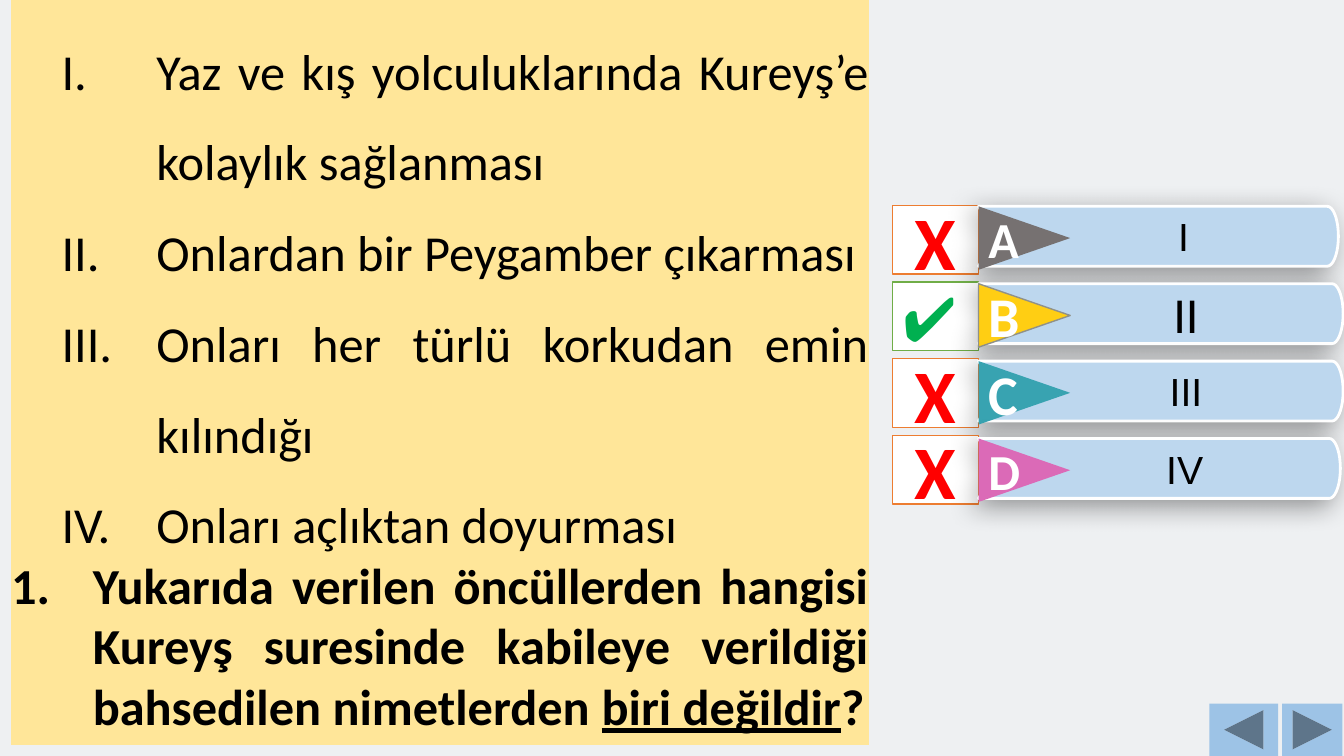
import math
from pptx import Presentation
from pptx import util as u
from pptx.dml.color import RGBColor
from pptx.enum import shapes, text
from pptx.oxml.ns import qn
from lxml import etree

PREMISES = [
    "Yaz ve kış yolculuklarında Kureyş’e kolaylık sağlanması",
    "Onlardan bir Peygamber çıkarması",
    "Onları her türlü korkudan emin kılındığı",
    "Onları açlıktan doyurması",
]
QUESTION = [
    "Yukarıda verilen öncüllerden hangisi Kureyş suresinde kabileye "
    "verildiği bahsedilen nimetlerden ",
    "biri değildir",
    "?",
]
WRONG = ("X", 54, "FF0000", "ED7D31", True, "CENTER")
RIGHT = ("✔", 44, "00B050", "70AD47", False, "LEFT")
ANSWERS = [
    ("A", 36, "767171", None, "I", 28, "Arial", 9.07, WRONG),
    ("B", 40, "FFCE13", "909189", "II", 36, "Calibri", 9.19, RIGHT),
    ("C", 40, "38A3B1", None, "III", 28, "Arial", 9.19, WRONG),
    ("D", 36, "DB6AB7", None, "IV", 28, "Arial", 9.12, WRONG),
]


def color(value):
    return RGBColor.from_string(value)


class Quiz:
    black = "000000"
    panel = "FFE699"
    bar_fill = "BDD7EE"
    button_fill = "9DC3E6"

    def __init__(self, slide):
        self.slide = slide
        slide.background.fill.solid()
        slide.background.fill.fore_color.rgb = color("EEF0F2")

    def paint(self, shape, fill, line=None, width=1):
        shape.shadow.inherit = False
        shape.fill.solid()
        shape.fill.fore_color.rgb = color(fill)
        if line:
            shape.line.color.rgb = color(line)
            shape.line.width = u.Pt(width)
        else:
            shape.line.fill.background()

    def style(self, font, size, ink, bold=False, name="Calibri"):
        font.name, font.size, font.bold = name, u.Pt(size), bold
        font.color.rgb = color(ink)

    def label(self, shape, content, size, ink, bold=False, name="Calibri", align="CENTER"):
        frame = shape.text_frame
        frame.text = content
        frame.vertical_anchor = text.MSO_ANCHOR.MIDDLE
        paragraph = frame.paragraphs[0]
        paragraph.alignment = getattr(text.PP_ALIGN, align)
        self.style(paragraph.runs[0].font, size, ink, bold, name)
        return paragraph

    def shape(self, kind, left, top, width, height, fill, line=None):
        shape = self.slide.shapes.add_shape(
            kind, u.Cm(left), u.Cm(top), u.Cm(width), u.Cm(height))
        self.paint(shape, fill, line)
        return shape

    def indent(self, paragraph, left, hanging=0.0, numbering=None):
        properties = paragraph._p.get_or_add_pPr()
        properties.set("marL", str(u.Cm(left)))
        properties.set("indent", str(-u.Cm(hanging)))
        if numbering:
            etree.SubElement(properties, qn("a:buFont"), typeface="+mj-lt")
            etree.SubElement(properties, qn("a:buAutoNum"), type=numbering)

    def question(self, premises, question):
        self.slide.shapes.title.element.getparent().remove(self.slide.shapes.title.element)
        body = self.slide.placeholders[1]
        body.left, body.top = u.Cm(0.28), u.Cm(0)
        body.width, body.height = u.Cm(21.62), u.Cm(18.77)
        body.fill.solid()
        body.fill.fore_color.rgb = color(self.panel)
        frame = body.text_frame
        frame.margin_left = frame.margin_right = frame.margin_top = frame.margin_bottom = 0
        frame.vertical_anchor = text.MSO_ANCHOR.MIDDLE
        frame.word_wrap = True
        frame.auto_size = text.MSO_AUTO_SIZE.TEXT_TO_FIT_SHAPE
        frame.text = "\n".join(premises + [""])
        for paragraph in frame.paragraphs:
            paragraph.alignment = text.PP_ALIGN.JUSTIFY
            paragraph.space_before = u.Pt(0)
        *listed, asked = frame.paragraphs
        for paragraph in listed:
            paragraph.level = 1
            paragraph.line_spacing = 1.5
            self.indent(paragraph, 3.66, 2.39, "romanUcPeriod")
            self.style(paragraph.runs[0].font, 36, self.black)
        asked.line_spacing = 1.0
        self.indent(asked, 2.06, 2.06, "arabicPeriod")
        for part in question:
            run = asked.add_run()
            run.text = part
            self.style(run.font, 36, self.black, True)
        asked.runs[1].font.underline = True

    def bar(self, left, top, width, height, content, size, name):
        middle, cap, notch = height / 2, 0.28, 0.46
        angles = [math.radians(10 * step - 90) for step in range(19)]
        points = [(left + width - cap + cap * math.cos(angle),
                   top + middle + middle * math.sin(angle)) for angle in angles]
        points += [(left, top + height), (left + notch, top + middle)]
        builder = self.slide.shapes.build_freeform(u.Cm(left), u.Cm(top))
        builder.add_line_segments([(u.Cm(x), u.Cm(y)) for x, y in points], close=True)
        bar = builder.convert_to_shape()
        self.paint(bar, self.bar_fill, "FFFFFF", 2)
        self.cast_shadow(bar)
        self.indent(self.label(bar, content, size, self.black, name=name), 1.27)

    def cast_shadow(self, shape):
        effects = shape._element.spPr.find(qn("a:effectLst"))
        shadow = etree.SubElement(
            effects, qn("a:outerShdw"), blurRad=str(u.Pt(20)), dist=str(u.Pt(7)),
            dir=str(135 * 60000), algn="tr", rotWithShape="0")
        tint = etree.SubElement(shadow, qn("a:srgbClr"), val=self.black)
        etree.SubElement(tint, qn("a:alpha"), val="40000")

    def arrow(self, left, top, width, height, letter, size, fill, line):
        offset = (width - height) / 2
        arrow = self.shape(shapes.MSO_SHAPE.ISOSCELES_TRIANGLE,
                           left + offset, top - offset, height, width, fill, line)
        arrow.rotation = 90
        self.label(arrow, letter, size, "FFFFFF", True)
        arrow.text_frame._txBody.bodyPr.set("vert", "vert270")

    def mark(self, top, symbol, size, ink, line, bold, align):
        box = self.shape(shapes.MSO_SHAPE.RECTANGLE, 22.5, top, 2.16, 1.73, "FFFFFF", line)
        self.label(box, symbol, size, ink, bold, align=align)

    def answer(self, row, letter, letter_size, fill, line, content, size, name, width, mark):
        top = 5.2 + 1.95 * row
        self.mark(5.18 + 1.93 * row, *mark)
        self.bar(24.66, top, width, 1.51, content, size, name)
        self.arrow(24.66, top, 2.31, 1.6, letter, letter_size, fill, line)

    def navigation(self):
        buttons = [(shapes.MSO_SHAPE.ACTION_BUTTON_BACK_OR_PREVIOUS, 30.48, 1.73),
                   (shapes.MSO_SHAPE.ACTION_BUTTON_FORWARD_OR_NEXT, 32.31, 1.52)]
        for kind, left, width in buttons:
            self.shape(kind, left, 17.73, width, 1.32, self.button_fill)


def main():
    presentation = Presentation()
    presentation.slide_width, presentation.slide_height = u.Cm(33.87), u.Cm(19.05)
    quiz = Quiz(presentation.slides.add_slide(presentation.slide_layouts[1]))
    quiz.navigation()
    quiz.question(PREMISES, QUESTION)
    for row, answer in enumerate(ANSWERS):
        quiz.answer(row, *answer)
    presentation.save("out.pptx")


if __name__ == "__main__":
    main()
